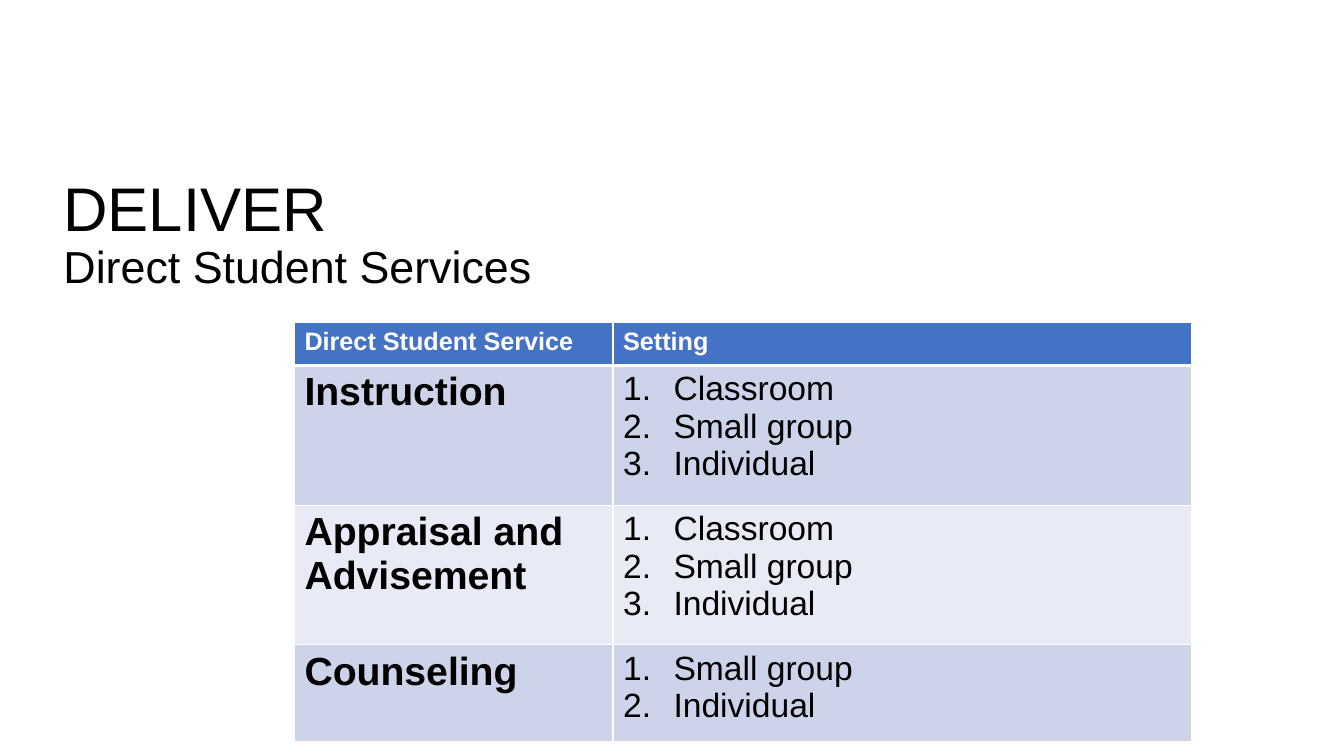
import lxml.etree
import pptx
import pptx.dml.color
import pptx.enum.text
import pptx.oxml.ns
import pptx.util

Cm = pptx.util.Cm
Pt = pptx.util.Pt
qn = pptx.oxml.ns.qn

FONT = "Arial"
COLORS = {
    "text": "000000",
    "header_text": "FFFFFF",
    "header": "4472C4",
    "band_dark": "CDD4EA",
    "band_light": "E8EBF5",
    "border": "FFFFFF",
}
HEADINGS = ("Direct Student Service", "Setting")
SERVICES = [
    ("Instruction", ["Classroom", "Small group", "Individual"]),
    ("Appraisal and Advisement", ["Classroom", "Small group", "Individual"]),
    ("Counseling", ["Small group", "Individual"]),
]
COLUMN_WIDTHS = (8.03, 14.58)
ROW_HEIGHTS = (1.08, 3.52, 3.52, 2.44)


def rgb(name):
    """Return the named colour."""
    return pptx.dml.color.RGBColor.from_string(COLORS[name])


def style_font(font, size, color, bold=False):
    """Set the face, size, colour and weight of a font."""
    font.name = FONT
    font.size = Pt(size)
    font.bold = bold
    font.color.rgb = rgb(color)


def number_paragraph(paragraph):
    """Give a paragraph an automatic number and a hanging indent."""
    properties = paragraph._p.get_or_add_pPr()
    properties.set("marL", str(Cm(1.27)))
    properties.set("indent", str(-Cm(1.27)))
    lxml.etree.SubElement(properties, qn("a:buFont"), typeface="+mj-lt")
    lxml.etree.SubElement(properties, qn("a:buAutoNum"), type="arabicPeriod")


def set_borders(cell, top, bottom):
    """Draw the four cell borders, with top and bottom widths in points."""
    properties = cell._tc.get_or_add_tcPr()
    widths = {"lnL": 1, "lnR": 1, "lnT": top, "lnB": bottom}
    for index, (side, width) in enumerate(widths.items()):
        line = lxml.etree.Element(qn(f"a:{side}"), w=str(Pt(width)))
        fill = lxml.etree.SubElement(line, qn("a:solidFill"))
        lxml.etree.SubElement(fill, qn("a:srgbClr"), val=COLORS["border"])
        properties.insert(index, line)


def fill_cell(cell, lines, size, color, bold=False, numbered=False):
    """Write one paragraph per line into a table cell."""
    frame = cell.text_frame
    frame.text = "\n".join(lines)
    for paragraph in frame.paragraphs:
        if numbered:
            number_paragraph(paragraph)
        style_font(paragraph.font, size, color, bold)


def add_title(slide, left, top, width, height):
    """Add the two-line title, centred vertically in its box."""
    shape = slide.shapes.add_textbox(Cm(left), Cm(top), Cm(width), Cm(height))
    frame = shape.text_frame
    frame.word_wrap = True
    frame.vertical_anchor = pptx.enum.text.MSO_ANCHOR.MIDDLE
    paragraph = frame.paragraphs[0]
    paragraph.line_spacing = 0.9
    heading = paragraph.add_run()
    heading.text = "DELIVER"
    style_font(heading.font, 44, "text")
    paragraph.add_line_break()
    subheading = paragraph.add_run()
    subheading.text = "Direct Student Services"
    style_font(subheading.font, 32, "text")


def add_services_table(slide, left, top):
    """Add the table of services and their settings."""
    table = slide.shapes.add_table(
        len(ROW_HEIGHTS), len(COLUMN_WIDTHS), Cm(left), Cm(top),
        Cm(sum(COLUMN_WIDTHS)), Cm(sum(ROW_HEIGHTS))).table
    for column, width in zip(table.columns, COLUMN_WIDTHS):
        column.width = Cm(width)
    for row, height in zip(table.rows, ROW_HEIGHTS):
        row.height = Cm(height)

    for cell, heading in zip(table.rows[0].cells, HEADINGS):
        fill_cell(cell, [heading], 18, "header_text", bold=True)
    for index, (service, settings) in enumerate(SERVICES, start=1):
        fill_cell(table.cell(index, 0), [service], 28, "text", bold=True)
        fill_cell(table.cell(index, 1), settings, 24, "text", numbered=True)

    fills = ("header", "band_dark", "band_light", "band_dark")
    for index, (row, fill) in enumerate(zip(table.rows, fills)):
        for cell in row.cells:
            cell.fill.solid()
            cell.fill.fore_color.rgb = rgb(fill)
            set_borders(cell, top=3 if index == 1 else 1,
                        bottom=3 if index == 0 else 1)


def main():
    """Build and save the slide."""
    presentation = pptx.Presentation()
    presentation.slide_width = Cm(33.87)
    presentation.slide_height = Cm(19.05)
    slide = presentation.slides.add_slide(presentation.slide_layouts[6])
    add_title(slide, 1.35, 4.09, 29.21, 3.68)
    add_services_table(slide, 7.42, 8.13)
    presentation.save("out.pptx")


if __name__ == "__main__":
    main()
